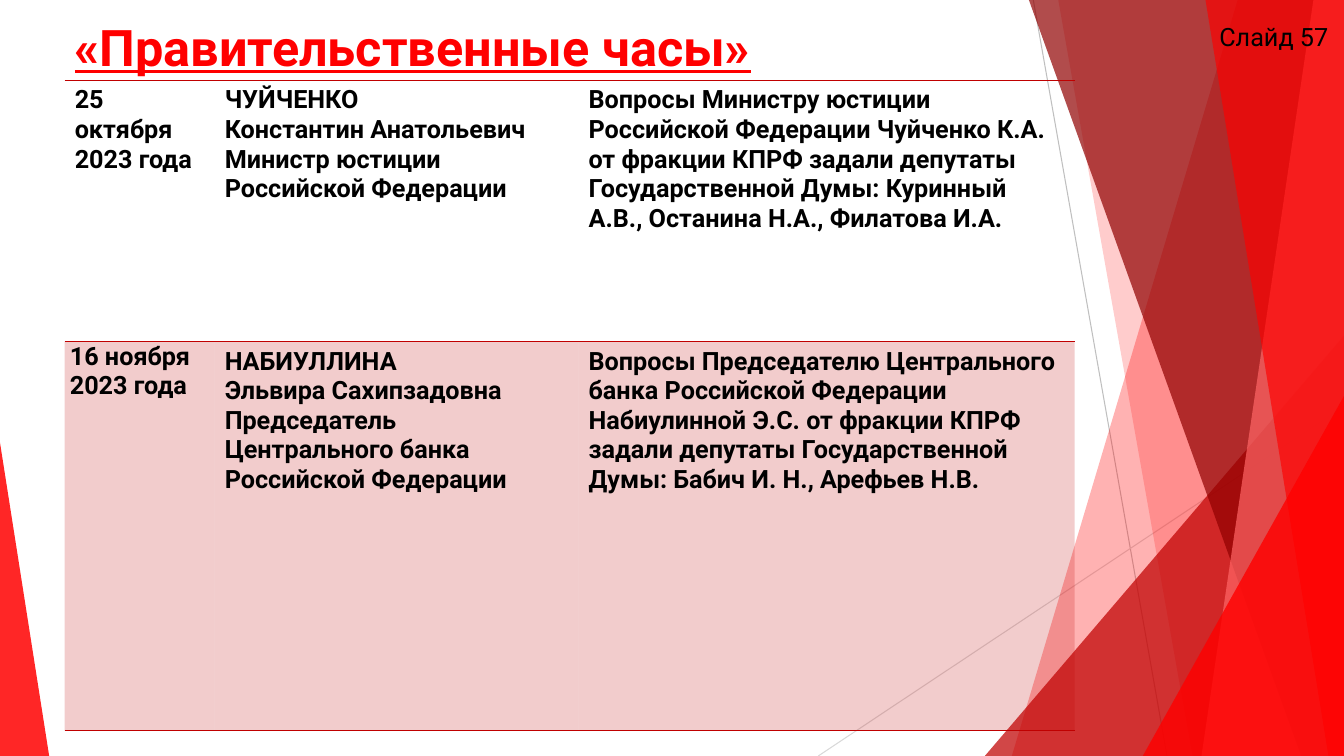
from dataclasses import dataclass

from lxml import etree
from pptx import Presentation
from pptx.dml.color import RGBColor
from pptx.enum import shapes, text
from pptx.oxml.ns import qn
from pptx.util import Cm, Pt


@dataclass(frozen=True)
class Theme:
    font: str = "Roboto"
    title_size: int = 36
    body_size: int = 18
    red: str = "FF0000"
    crimson: str = "C00000"
    maroon: str = "900000"
    coral: str = "FF6666"
    ink: str = "000000"
    grey: str = "BFBFBF"
    light_grey: str = "D9D9D9"


THEME = Theme()
WIDTH, HEIGHT = 33.87, 19.05
NO_GRID_STYLE = "{2D5ABB26-0587-4C30-8999-92F81FD0307C}"

TITLE = "«Правительственные часы»"
SLIDE_LABEL = "Слайд 57"
HOURS = [
    (
        ["25 октября 2023 года"],
        ["ЧУЙЧЕНКО",
         "Константин Анатольевич Министр юстиции Российской Федерации"],
        ["Вопросы Министру юстиции Российской Федерации Чуйченко К.А. "
         "от фракции КПРФ задали депутаты Государственной Думы: "
         "Куринный А.В., Останина Н.А., Филатова И.А."],
    ),
    (
        ["16 ноября 2023 года"],
        ["НАБИУЛЛИНА", "Эльвира Сахипзадовна",
         "Председатель Центрального банка Российской Федерации"],
        ["Вопросы Председателю Центрального банка Российской Федерации "
         "Набиулинной Э.С. от фракции КПРФ задали депутаты "
         "Государственной Думы: Бабич И. Н., Арефьев Н.В."],
    ),
]
COLUMN_WIDTHS = [3.78, 9.17, 12.5]
ROW_HEIGHTS = [6.58, 9.8]

# start x, start y, end x, end y, colour
RAYS = [
    (26.04, 0, 29.41, HEIGHT, THEME.grey),
    (WIDTH, 10.24, 20.62, HEIGHT, THEME.light_grey),
]
# A band has its left edge at the top and at the bottom of the slide;
# a triangle has left, top, width, height and the apex position.
FACETS = [
    ("band", (31.19, 25.5), THEME.red, 30),
    ("band", (26.67, 30.05), THEME.red, 20),
    ("triangle", (24.82, 8.46, 9.05, 10.59, 1), THEME.crimson, 72),
    ("band", (25.93, 32.79), THEME.maroon, 70),
    ("band", (33.1, 30.28), THEME.coral, 70),
    ("band", (30.38, 33.48), THEME.red, 65),
    ("triangle", (28.8, 9.98, 5.07, 9.07, 1), THEME.red, 80),
    ("triangle", (0, 11.15, 1.24, 7.9, 0), THEME.red, 85),
]


def paint(fill, element, color, opacity):
    """Fill solidly with a colour and an opacity in percent."""
    fill.solid()
    fill.fore_color.rgb = RGBColor.from_string(color)
    color_node = next(element.iter(qn("a:srgbClr")))
    etree.SubElement(color_node, qn("a:alpha"), val=str(opacity * 1000))


def style_font(paragraph, color=THEME.ink, size=THEME.body_size, bold=False):
    paragraph.font.name = THEME.font
    paragraph.font.size = Pt(size)
    paragraph.font.bold = bold
    paragraph.font.color.rgb = RGBColor.from_string(color)


def add_ray(slide, x1, y1, x2, y2, color):
    ray = slide.shapes.add_connector(
        shapes.MSO_CONNECTOR.STRAIGHT, Cm(x1), Cm(y1), Cm(x2), Cm(y2))
    ray.line.color.rgb = RGBColor.from_string(color)
    ray.line.width = Pt(0.75)
    etree.SubElement(ray.element.spPr, qn("a:effectLst"))


def add_facet(slide, kind, geometry, color, opacity):
    if kind == "band":
        top_x, bottom_x = geometry
        builder = slide.shapes.build_freeform(Cm(top_x), 0)
        builder.add_line_segments([
            (Cm(WIDTH), 0), (Cm(WIDTH), Cm(HEIGHT)), (Cm(bottom_x), Cm(HEIGHT))])
        facet = builder.convert_to_shape()
    else:
        *box, apex = geometry
        facet = slide.shapes.add_shape(
            shapes.MSO_SHAPE.ISOSCELES_TRIANGLE, *map(Cm, box))
        facet.adjustments[0] = apex
    facet.shadow.inherit = False
    facet.line.fill.background()
    paint(facet.fill, facet.element, color, opacity)


def add_title(slide):
    title = slide.shapes.title
    title.left, title.top = Cm(1.63), Cm(0.15)
    title.width, title.height = Cm(23.88), Cm(3.66)
    frame = title.text_frame
    frame.text = TITLE
    frame.auto_size = text.MSO_AUTO_SIZE.NONE
    frame.vertical_anchor = text.MSO_ANCHOR.TOP
    frame.margin_top = Cm(0.25)
    paragraph = frame.paragraphs[0]
    paragraph.alignment = text.PP_ALIGN.LEFT
    style_font(paragraph, THEME.red, THEME.title_size, bold=True)
    paragraph.font.underline = True


def add_border(properties, position, side):
    border = etree.Element(qn(f"a:{side}"), w=str(Pt(1)))
    fill = etree.SubElement(border, qn("a:solidFill"))
    etree.SubElement(fill, qn("a:srgbClr"), val=THEME.crimson)
    properties.insert(position, border)


def fill_cell(cell, lines, shaded):
    cell.text = "\n".join(lines)
    for paragraph in cell.text_frame.paragraphs:
        style_font(paragraph, bold=True)
    properties = cell._tc.get_or_add_tcPr()
    if shaded:
        paint(cell.fill, properties, THEME.crimson, 20)
    else:
        cell.fill.background()
    for position, side in enumerate(["lnB"] if shaded else ["lnT", "lnB"]):
        add_border(properties, position, side)


def add_hours_table(slide):
    frame = slide.shapes.add_table(
        len(HOURS), len(COLUMN_WIDTHS), Cm(1.63), Cm(2.03),
        Cm(sum(COLUMN_WIDTHS)), Cm(sum(ROW_HEIGHTS)))
    table = frame.table
    table.first_row = table.horz_banding = False
    next(frame.element.iter(qn("a:tableStyleId"))).text = NO_GRID_STYLE
    for column, width in zip(table.columns, COLUMN_WIDTHS):
        column.width = Cm(width)
    for index, (row, height) in enumerate(zip(table.rows, ROW_HEIGHTS)):
        row.height = Cm(height)
        for cell, lines in zip(row.cells, HOURS[index]):
            fill_cell(cell, lines, shaded=index % 2 == 1)
    second_date = table.cell(1, 0)
    second_date.margin_left = second_date.margin_right = Cm(0.13)
    second_date.margin_top = second_date.margin_bottom = 0


def add_slide_label(slide):
    label = slide.shapes.add_textbox(Cm(30.48), Cm(0.41), Cm(3.38), Cm(1.02))
    label.text_frame.text = SLIDE_LABEL
    label.text_frame.word_wrap = False
    label.text_frame.auto_size = text.MSO_AUTO_SIZE.SHAPE_TO_FIT_TEXT
    style_font(label.text_frame.paragraphs[0])


def main():
    presentation = Presentation()
    presentation.slide_width, presentation.slide_height = Cm(WIDTH), Cm(HEIGHT)
    slide = presentation.slides.add_slide(presentation.slide_layouts[5])
    for ray in RAYS:
        add_ray(slide, *ray)
    for facet in FACETS:
        add_facet(slide, *facet)
    add_title(slide)
    add_hours_table(slide)
    add_slide_label(slide)
    presentation.save("out.pptx")


if __name__ == "__main__":
    main()
